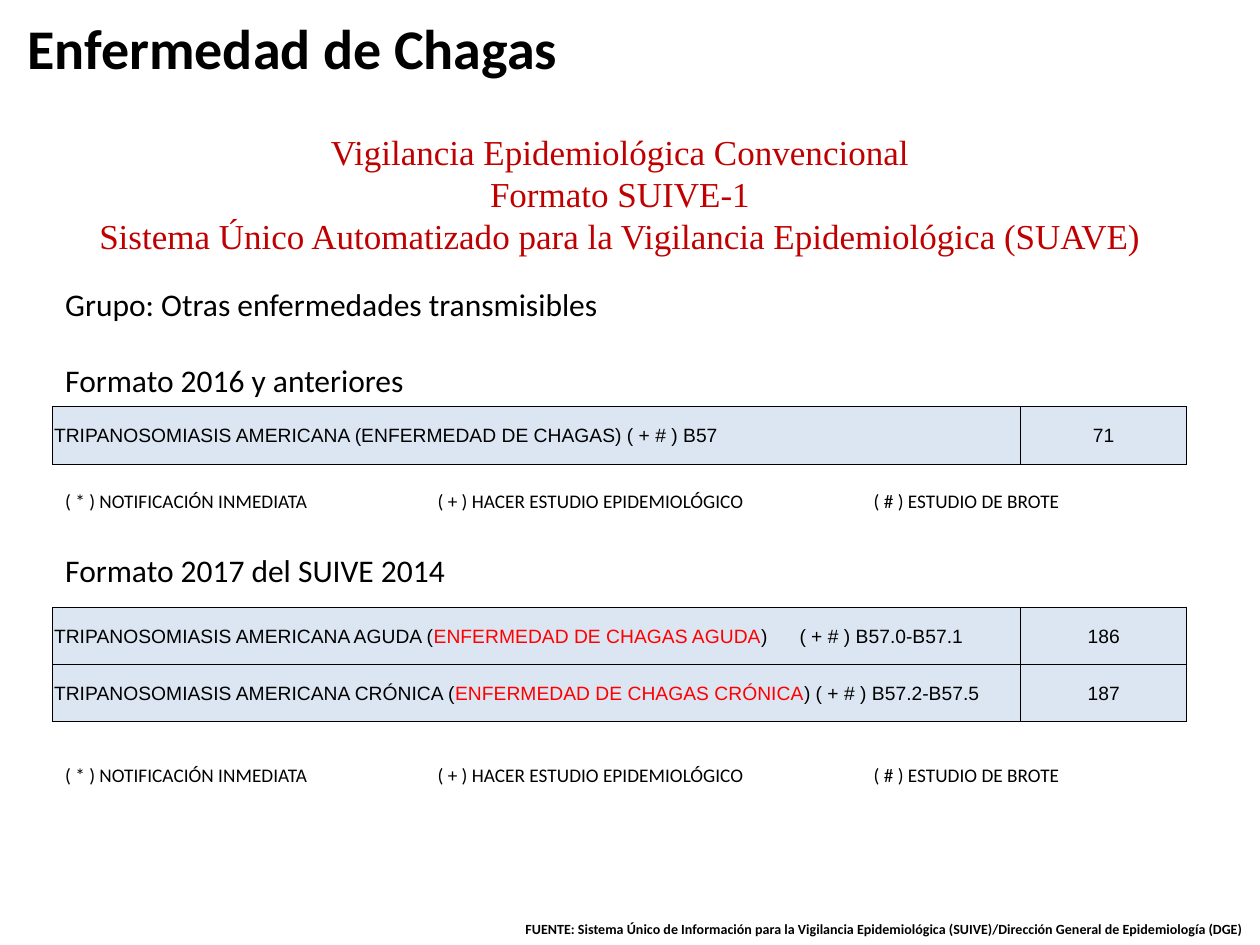
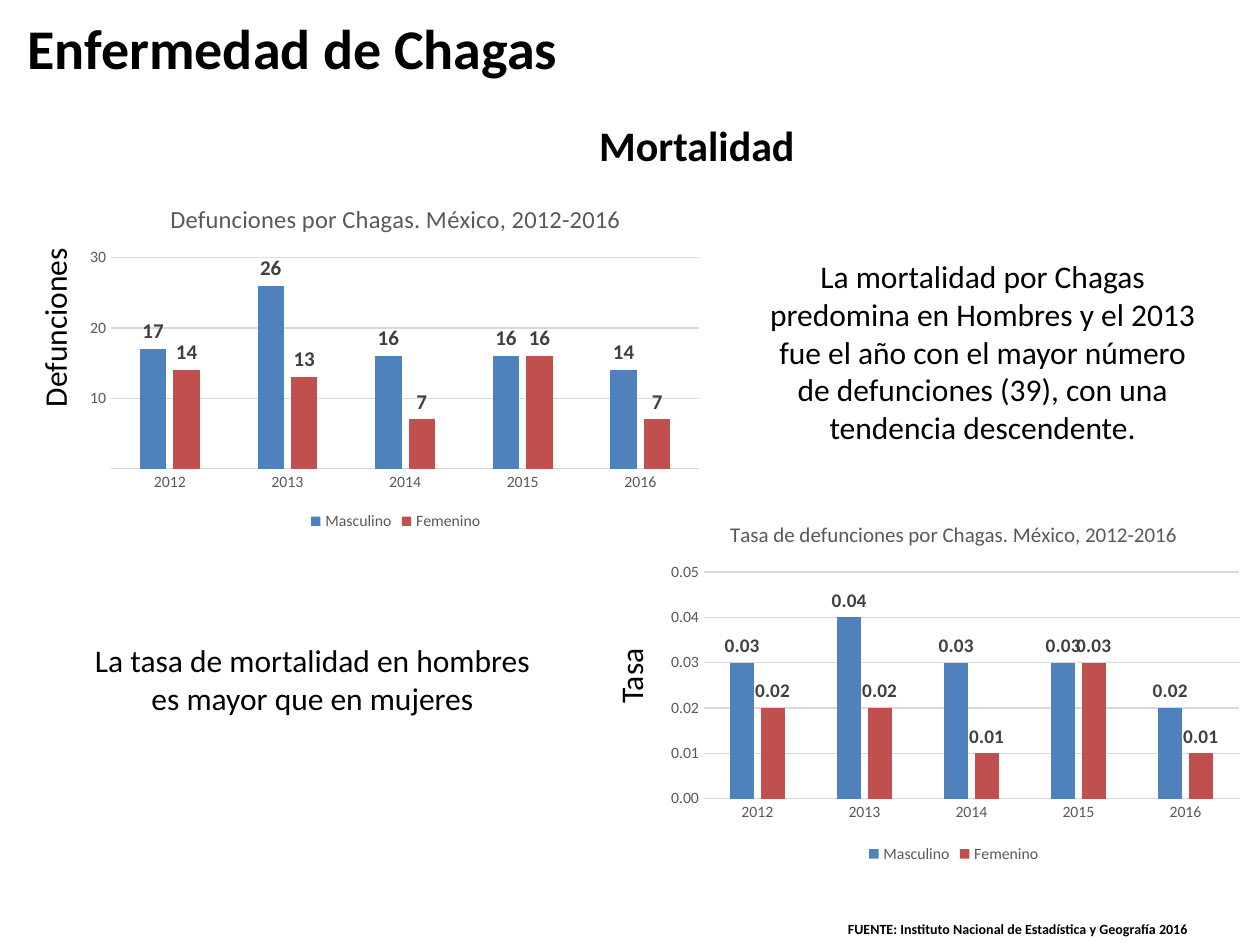
from lxml.etree import SubElement
from pptx import Presentation
from pptx.chart.data import CategoryChartData
from pptx.dml.color import RGBColor
from pptx.enum.chart import XL_CHART_TYPE, XL_LABEL_POSITION, XL_LEGEND_POSITION, XL_TICK_MARK
from pptx.enum.shapes import MSO_SHAPE
from pptx.enum.text import MSO_ANCHOR, MSO_AUTO_SIZE, PP_ALIGN
from pptx.oxml import parse_xml
from pptx.oxml.ns import nsdecls, qn
from pptx.util import Pt

BLACK = RGBColor(0, 0, 0)
WHITE = RGBColor(255, 255, 255)
RED = RGBColor(255, 0, 0)
DARK_RED = RGBColor(192, 0, 0)
PALE_BLUE = RGBColor(220, 230, 242)
AXIS_GREY = RGBColor(89, 89, 89)
LABEL_GREY = RGBColor(64, 64, 64)
GRID_GREY = RGBColor(217, 217, 217)
MALE_BLUE = RGBColor(79, 129, 189)
FEMALE_RED = RGBColor(192, 80, 77)
FONT = "Calibri"
YEARS = ["2012", "2013", "2014", "2015", "2016"]
NOTES = "( * ) NOTIFICACIÓN INMEDIATA\t( + ) HACER ESTUDIO EPIDEMIOLÓGICO\t( # ) ESTUDIO DE BROTE"


def set_font(font, size, color=BLACK, bold=False, name=FONT):
    """Apply size, colour, weight and family to a font."""
    font.size, font.bold, font.name = Pt(size), bold, name
    font.color.rgb = color


def write(paragraph, text, align=PP_ALIGN.LEFT, before=0, tabs=(), **style):
    """Append a run to a paragraph with the given format."""
    paragraph.alignment = align
    if before:
        paragraph.space_before = Pt(before)
    if tabs:
        stops = SubElement(paragraph._p.get_or_add_pPr(), qn("a:tabLst"))
        for stop in tabs:
            SubElement(stops, qn("a:tab"), pos=str(Pt(stop)), algn="l")
    run = paragraph.add_run()
    run.text = text
    set_font(run.font, **style)


def add_text(slide, box, lines, gaps=(), wrap=True, grow=True,
             anchor=MSO_ANCHOR.TOP, rotation=0, **style):
    """Add a text box with one paragraph per line and gaps before later lines."""
    holder = slide.shapes.add_textbox(*map(Pt, box))
    holder.rotation = rotation
    frame = holder.text_frame
    frame.word_wrap = wrap
    frame.auto_size = MSO_AUTO_SIZE.SHAPE_TO_FIT_TEXT if grow else MSO_AUTO_SIZE.NONE
    frame.vertical_anchor = anchor
    for index, line in enumerate(lines):
        paragraph = frame.paragraphs[0] if index == 0 else frame.add_paragraph()
        write(paragraph, line, before=gaps[index] if gaps else 0, **style)


def add_title(slide):
    """Add the heading shared by the slides."""
    add_text(slide, (8.6, 13, 508, 27.4), ["Enfermedad de Chagas"], grow=False,
             anchor=MSO_ANCHOR.MIDDLE, size=32, bold=True)


def add_source(slide, left, width, source, **style):
    """Add the source line at the foot of the slide."""
    add_text(slide, (left, 522.7, width, 17), ["FUENTE: " + source],
             size=8, bold=True, **style)


def add_notes(slide, top):
    """Add the key to the notification symbols."""
    add_text(slide, (30.2, top, 600.5, 34), [NOTES], size=11, tabs=(212.8, 462))


def format_cell(cell):
    """Give a cell its fill, margins and thin black borders."""
    cell.fill.solid()
    cell.fill.fore_color.rgb = PALE_BLUE
    cell.vertical_anchor = MSO_ANCHOR.MIDDLE
    cell.margin_left = cell.margin_right = cell.margin_top = Pt(0.7)
    cell.margin_bottom = 0
    properties = cell._tc.get_or_add_tcPr()
    for index, side in enumerate(("lnL", "lnR", "lnT", "lnB")):
        properties.insert(index, parse_xml(
            f'<a:{side} {nsdecls("a")} w="{Pt(0.5)}"><a:solidFill>'
            f'<a:srgbClr val="{BLACK}"/></a:solidFill></a:{side}>'))


def add_codes(slide, top, row_height, diseases):
    """Add a table of diseases, each made of coloured runs, and their codes."""
    table = slide.shapes.add_table(
        len(diseases), 2, Pt(30.2), Pt(top), Pt(648), Pt(row_height * len(diseases))).table
    table.first_row = table.horz_banding = False
    table.columns[0].width, table.columns[1].width = Pt(553), Pt(95)
    for row, (runs, code) in enumerate(diseases):
        table.rows[row].height = Pt(row_height)
        disease_cell, code_cell = table.cell(row, 0), table.cell(row, 1)
        for cell in (disease_cell, code_cell):
            format_cell(cell)
        for text, color in runs:
            tabs = (426,) if "\t" in text else ()
            write(disease_cell.text_frame.paragraphs[0], text, tabs=tabs,
                  size=11, color=color, name="Arial")
        write(code_cell.text_frame.paragraphs[0], code, align=PP_ALIGN.CENTER,
              size=11, name="Arial")


def place_plot(chart, x, y, w, h):
    """Fix the inner plot area as fractions of the chart."""
    area = chart._chartSpace.chart.plotArea
    for old in area.findall(qn("c:layout")):
        area.remove(old)
    places = "".join(f'<c:{key} val="{value}"/>'
                     for key, value in zip("xywh", (x, y, w, h)))
    area.insert(0, parse_xml(
        f'<c:layout {nsdecls("c")}><c:manualLayout><c:layoutTarget val="inner"/>'
        f'<c:xMode val="edge"/><c:yMode val="edge"/>{places}</c:manualLayout></c:layout>'))


def add_deaths_chart(slide, box, title, title_size, label_size, men, women,
                     number_format, top_value, step, plot_place):
    """Add a clustered column chart of men and women by year."""
    data = CategoryChartData(number_format=number_format)
    data.categories = YEARS
    data.add_series("Masculino", men)
    data.add_series("Femenino", women)
    chart = slide.shapes.add_chart(
        XL_CHART_TYPE.COLUMN_CLUSTERED, *map(Pt, box), data).chart
    set_font(chart.font, 10)
    chart.has_title = True
    write(chart.chart_title.text_frame.paragraphs[0], title,
          align=PP_ALIGN.CENTER, size=title_size, color=AXIS_GREY)
    chart.has_legend = True
    chart.legend.position = XL_LEGEND_POSITION.BOTTOM
    chart.legend.include_in_layout = False
    set_font(chart.legend.font, 9, AXIS_GREY)

    years, values = chart.category_axis, chart.value_axis
    for axis in (years, values):
        axis.major_tick_mark = axis.minor_tick_mark = XL_TICK_MARK.NONE
        set_font(axis.tick_labels.font, 9, AXIS_GREY)
    values.minimum_scale, values.maximum_scale, values.major_unit = 0, top_value, step
    values.tick_labels.number_format = number_format
    values.tick_labels.number_format_is_linked = False
    values.format.line.fill.background()
    for line in (years.format.line, values.major_gridlines.format.line):
        line.color.rgb, line.width = GRID_GREY, Pt(0.75)

    plot = chart.plots[0]
    plot.gap_width, plot.overlap, plot.vary_by_categories = 219, -27, False
    for series, color in zip(plot.series, (MALE_BLUE, FEMALE_RED)):
        series.format.fill.solid()
        series.format.fill.fore_color.rgb = color
        labels = series.data_labels
        labels.show_value = True
        labels.position = XL_LABEL_POSITION.OUTSIDE_END
        labels.number_format, labels.number_format_is_linked = number_format, False
        set_font(labels.font, label_size, LABEL_GREY, bold=True)
    place_plot(chart, *plot_place)


def add_section(slide, box, text):
    """Add the white section heading."""
    section = slide.shapes.add_shape(MSO_SHAPE.RECTANGLE, *map(Pt, box))
    section.shadow.inherit = False
    section.fill.solid()
    section.fill.fore_color.rgb = WHITE
    section.line.fill.background()
    section.text_frame.vertical_anchor = MSO_ANCHOR.MIDDLE
    write(section.text_frame.paragraphs[0], text, align=PP_ALIGN.CENTER, size=24, bold=True)


def build_surveillance(slide):
    """Build the slide on conventional surveillance."""
    add_codes(slide, 347, 32.6, [
        ([("TRIPANOSOMIASIS AMERICANA AGUDA (", BLACK),
          ("ENFERMEDAD DE CHAGAS AGUDA", RED),
          (")\t( + # ) B57.0-B57.1", BLACK)], "186"),
        ([("TRIPANOSOMIASIS AMERICANA CRÓNICA (", BLACK),
          ("ENFERMEDAD DE CHAGAS CRÓNICA", RED),
          (") ( + # ) B57.2-B57.5", BLACK)], "187")])
    add_text(slide, (5.8, 70.6, 697, 80),
             ["Vigilancia Epidemiológica Convencional", "Formato SUIVE-1",
              "Sistema Único Automatizado para la Vigilancia Epidemiológica (SUAVE)"],
             anchor=MSO_ANCHOR.MIDDLE, align=PP_ALIGN.CENTER,
             size=20, color=DARK_RED, name="Times New Roman")
    add_text(slide, (30.2, 159.1, 322.6, 181.4),
             ["Grupo: Otras enfermedades transmisibles", "Formato 2016 y anteriores",
              "Formato 2017 del SUIVE 2014"], gaps=(0, 22, 87), wrap=False, size=18)
    add_codes(slide, 232.4, 33, [
        ([("TRIPANOSOMIASIS AMERICANA (ENFERMEDAD DE CHAGAS) ( + # ) B57", BLACK)], "71")])
    for top in (432.7, 275.8):
        add_notes(slide, top)
    add_title(slide)
    add_source(slide, 39.6, 678.2, "Sistema Único de Información para la Vigilancia "
               "Epidemiológica (SUIVE)/Dirección General de Epidemiología (DGE)",
               align=PP_ALIGN.RIGHT)


def build_mortality(slide):
    """Build the slide on mortality."""
    add_section(slide, (305.3, 64.8, 185.8, 36), "Mortalidad")
    add_deaths_chart(slide, (45.4, 105.1, 361.4, 200.9),
                     "Defunciones por Chagas. México, 2012-2016", 14, 12,
                     (17, 26, 16, 16, 14), (14, 13, 7, 16, 7),
                     "#,###", 30, 10, (0.05, 0.21, 0.93, 0.6))
    add_text(slide, (-22.3, 172.1, 106.6, 28.8), ["Defunciones"],
             wrap=False, rotation=270, size=18)
    add_text(slide, (428.4, 143.3, 266.4, 116.6),
             ["La mortalidad por Chagas predomina en Hombres y el 2013 fue el año con el "
              "mayor número de defunciones (39), con una tendencia descendente."],
             align=PP_ALIGN.CENTER, size=18)
    add_deaths_chart(slide, (375.1, 287.3, 339.8, 208.8),
                     "Tasa de defunciones por Chagas. México, 2012-2016", 12, 11,
                     (0.03, 0.04, 0.03, 0.03, 0.02), (0.02, 0.02, 0.01, 0.03, 0.01),
                     "0.00", 0.05, 0.01, (0.08, 0.19, 0.9, 0.62))
    add_text(slide, (337, 371.5, 46.8, 28.8), ["Tasa"],
             wrap=False, rotation=270, size=18)
    add_text(slide, (45.4, 362.9, 266.4, 51.1),
             ["La tasa de mortalidad en hombres es mayor que en mujeres"],
             align=PP_ALIGN.CENTER, size=18)
    add_title(slide)
    add_source(slide, 477.4, 210.2,
               "Instituto Nacional de Estadística y Geografía 2016", wrap=False)


def main():
    """Build and save the presentation."""
    deck = Presentation()
    deck.slide_width, deck.slide_height = Pt(720), Pt(540)
    for build in (build_surveillance, build_mortality):
        build(deck.slides.add_slide(deck.slide_layouts[6]))
    deck.save("out.pptx")


if __name__ == "__main__":
    main()
